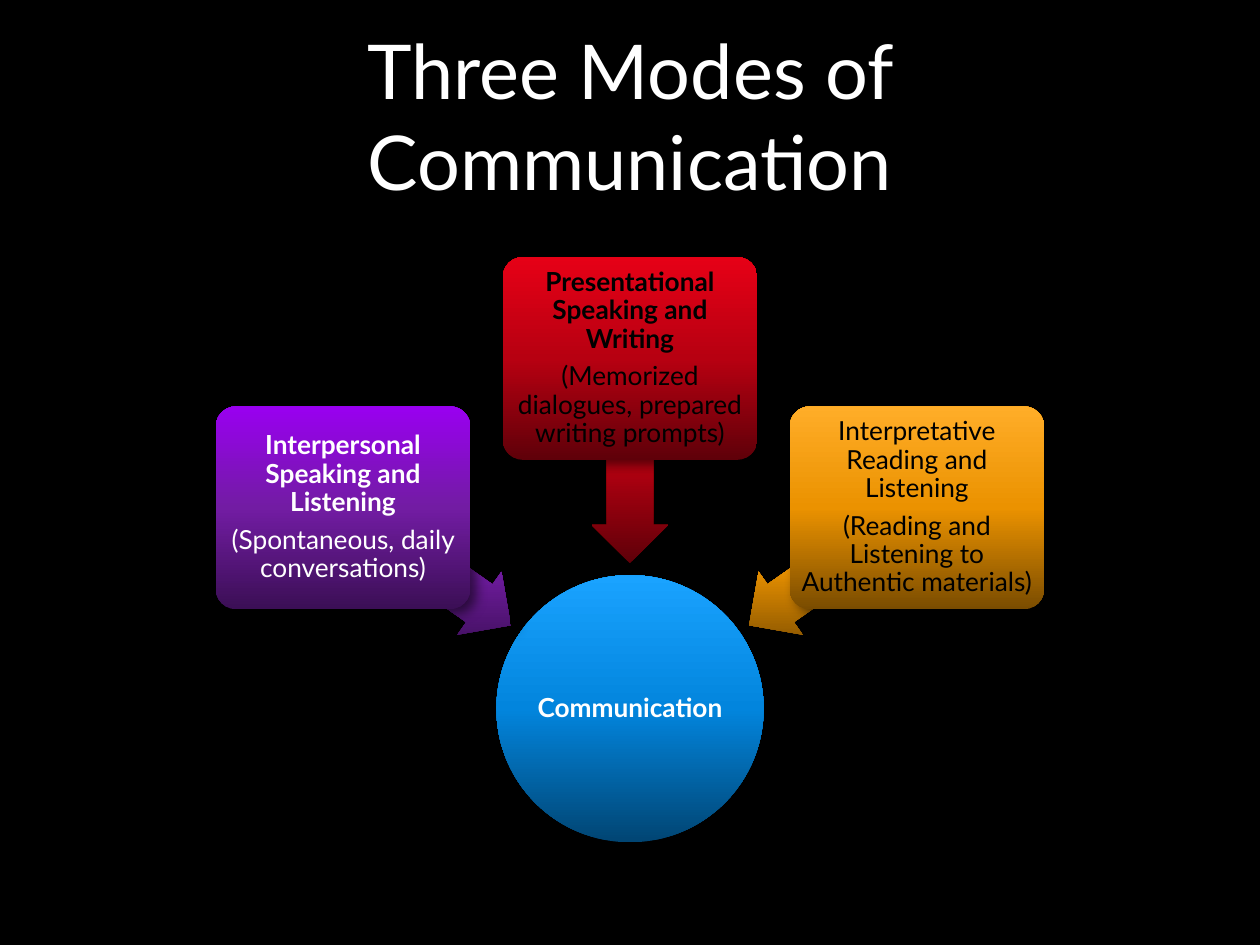
import math
from dataclasses import dataclass

from lxml import etree
from pptx import Presentation, util as u
from pptx.dml.color import RGBColor
from pptx.enum import shapes, text
from pptx.oxml import parse_xml
from pptx.oxml.ns import nsdecls


@dataclass(frozen=True)
class Theme:
    font: str = "Lato"
    title_size: float = 43.2
    label_size: float = 15
    background: str = "000000"
    light: str = "FFFFFF"
    dark: str = "000000"
    blue: tuple = ("014573", "0285DD", "1AA3FF")
    purple: tuple = ("3B0F55", "721CA3", "9900F0")
    red: tuple = ("5F0009", "B70011", "E60016")
    orange: tuple = ("7A4C00", "EB9200", "FFAD28")


THEME = Theme()
TITLE = "Three Modes of Communication"
HUB = "Communication"
MODES = [
    dict(angle=215, colors=THEME.purple, ink=THEME.light, bold_heading=True,
         lines=["Interpersonal Speaking and Listening",
                "(Spontaneous, daily conversations)"]),
    dict(angle=270, colors=THEME.red, ink=THEME.dark, bold_heading=True,
         lines=["Presentational Speaking and Writing",
                "(Memorized dialogues, prepared writing prompts)"]),
    dict(angle=325, colors=THEME.orange, ink=THEME.dark, bold_heading=False,
         lines=["Interpretative Reading and Listening",
                "(Reading and Listening to Authentic materials)"]),
]

WIDTH, HEIGHT = 10, 7.5
HUB_CENTER = (WIDTH / 2, HEIGHT * 0.75)
HUB_SIZE = (2.12, 2.12)
BOX_SIZE, BOX_RADIUS = (2.02, 1.61), 2.78
ARROW_SIZE, ARROW_RADIUS = (1.63, 0.61), 1.97


def on_ray(angle, radius):
    turn = math.radians(angle)
    return (HUB_CENTER[0] + radius * math.cos(turn),
            HUB_CENTER[1] + radius * math.sin(turn))


def add_gradient_shape(slide, kind, center, size, colors):
    left, top = (c - s / 2 for c, s in zip(center, size))
    shape = slide.shapes.add_shape(
        kind, *(u.Inches(v) for v in (left, top, *size)))
    shape.line.fill.background()
    stops = "".join(
        f'<a:gs pos="{i * 50000}"><a:srgbClr val="{color}"/></a:gs>'
        for i, color in enumerate(colors))
    gradient = parse_xml(
        f'<a:gradFill {nsdecls("a")} rotWithShape="0"><a:gsLst>{stops}</a:gsLst>'
        '<a:lin ang="16200000" scaled="0"/></a:gradFill>')
    shadow = parse_xml(
        f'<a:effectLst {nsdecls("a")}><a:outerShdw blurRad="{u.Pt(7)}" '
        f'dist="{u.Pt(4)}" dir="{35 * 60000}" rotWithShape="0">'
        '<a:srgbClr val="000000"><a:alpha val="55000"/></a:srgbClr>'
        '</a:outerShdw></a:effectLst>')
    outline = shape.line._get_or_add_ln()
    outline.addprevious(gradient)
    outline.addnext(shadow)
    return shape


def style_font(font, size, color, bold=False):
    font.name = THEME.font
    font.size = u.Pt(size)
    font.bold = bold
    font.color.rgb = RGBColor.from_string(color)


def write_label(shape, lines, ink, bold_heading, margin):
    frame = shape.text_frame
    frame.text = "\n".join(lines)
    frame.word_wrap = True
    frame.vertical_anchor = text.MSO_ANCHOR.MIDDLE
    frame.margin_left = frame.margin_right = u.Inches(margin)
    frame.margin_top = frame.margin_bottom = u.Inches(margin)
    for row, paragraph in enumerate(frame.paragraphs):
        paragraph.alignment = text.PP_ALIGN.CENTER
        paragraph.line_spacing = 0.9
        paragraph.space_after = u.Pt(THEME.label_size * 0.35)
        for run in paragraph.runs:
            style_font(run.font, THEME.label_size, ink, bold_heading and row == 0)


def add_title(slide):
    title = slide.shapes.title
    title.left, title.top = u.Inches(0.75), u.Inches(0.13)
    title.width, title.height = u.Inches(8.5), u.Inches(1.56)
    frame = title.text_frame
    frame.text = TITLE
    frame.word_wrap = True
    frame.auto_size = text.MSO_AUTO_SIZE.NONE
    frame.vertical_anchor = text.MSO_ANCHOR.MIDDLE
    frame.paragraphs[0].alignment = text.PP_ALIGN.CENTER
    style_font(frame.paragraphs[0].runs[0].font, THEME.title_size, THEME.light)


def add_mode(slide, mode):
    angle, colors = mode["angle"], mode["colors"]
    arrow = add_gradient_shape(slide, shapes.MSO_SHAPE.LEFT_ARROW,
                               on_ray(angle, ARROW_RADIUS), ARROW_SIZE, colors)
    arrow.rotation = angle
    arrow.adjustments[0], arrow.adjustments[1] = 0.6, 0.5
    box = add_gradient_shape(slide, shapes.MSO_SHAPE.ROUNDED_RECTANGLE,
                             on_ray(angle, BOX_RADIUS), BOX_SIZE, colors)
    box.adjustments[0] = 0.1
    write_label(box, mode["lines"], mode["ink"], mode["bold_heading"], 0.03)


def main():
    deck = Presentation()
    deck.slide_width, deck.slide_height = u.Inches(WIDTH), u.Inches(HEIGHT)
    slide = deck.slides.add_slide(deck.slide_layouts[5])
    slide.background.fill.solid()
    slide.background.fill.fore_color.rgb = RGBColor.from_string(THEME.background)
    add_title(slide)
    hub = add_gradient_shape(slide, shapes.MSO_SHAPE.OVAL,
                             HUB_CENTER, HUB_SIZE, THEME.blue)
    write_label(hub, [HUB], THEME.light, True, 0.01)
    for mode in MODES:
        add_mode(slide, mode)
    deck.save("out.pptx")


if __name__ == "__main__":
    main()
